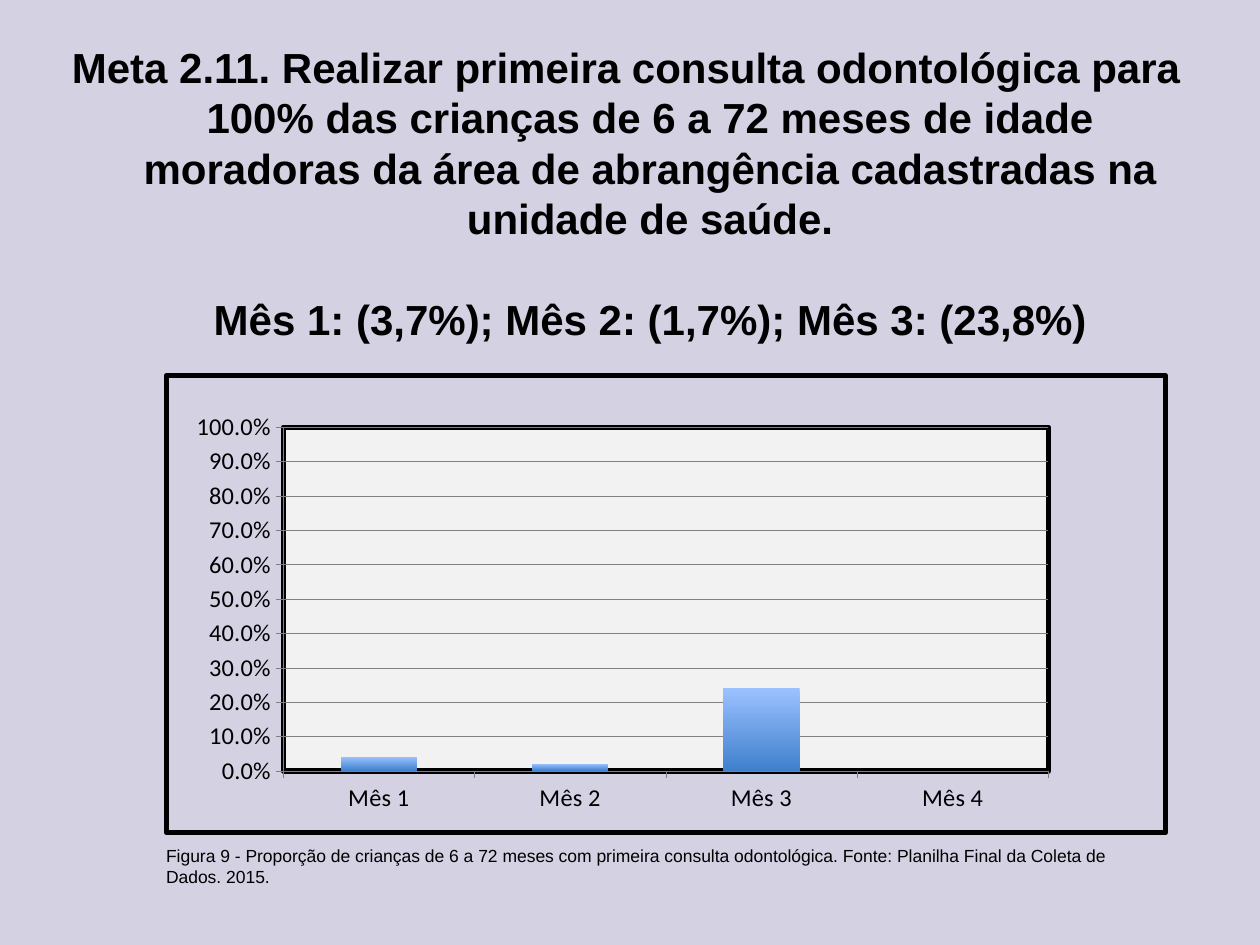
from lxml import etree
from pptx import Presentation
from pptx.chart.data import CategoryChartData
from pptx.dml.color import RGBColor
from pptx.enum.chart import XL_CHART_TYPE as ChartType, XL_TICK_MARK as Tick
from pptx.enum.text import MSO_ANCHOR as Anchor, MSO_AUTO_SIZE as AutoSize, PP_ALIGN as Align
from pptx.oxml import parse_xml
from pptx.oxml.ns import nsdecls, qn
from pptx.util import Inches, Pt

COLORS = {
    "background": "D4D1E3",
    "ink": "000000",
    "plot": "F2F2F2",
    "grid": "808080",
    "bar_top": "9BC1FF",
    "bar_bottom": "3F80CD",
}


def rgb(name):
    return RGBColor.from_string(COLORS[name])


def style_font(font, name, size, bold=False):
    font.name, font.size, font.bold = name, Pt(size), bold
    font.color.rgb = rgb("ink")


def place(shape, box):
    shape.left, shape.top, shape.width, shape.height = map(Inches, box)


def add_heading(slide, box, lines):
    title = slide.shapes.title
    place(title, box)
    frame = title.text_frame
    frame.text = "\n".join(lines)
    frame.word_wrap = True
    frame.auto_size = AutoSize.NONE
    frame.vertical_anchor = Anchor.TOP
    for number, para in enumerate(frame.paragraphs):
        para.alignment = Align.CENTER
        para.line_spacing = 1.0
        para.space_before = Pt(29 if number else 2)
        # The first line of the heading hangs left of the rest
        props = para._p.get_or_add_pPr()
        props.set("marL", str(Inches(0.38)))
        props.set("indent", str(Inches(0 if number else -0.38)))
        for span in para.runs:
            style_font(span.font, "Arial", 24, bold=True)


def framed_area(fill):
    """Chart shape properties with the thick black frame."""
    return parse_xml(
        f'<c:spPr {nsdecls("c", "a")}>{fill}<a:ln w="{Pt(3)}"><a:solidFill>'
        f'<a:srgbClr val="{COLORS["ink"]}"/></a:solidFill></a:ln></c:spPr>')


def set_plot_layout(plot_area, x, y, w, h):
    for old in plot_area.findall(qn("c:layout")):
        plot_area.remove(old)
    layout = etree.Element(qn("c:layout"))
    manual = etree.SubElement(layout, qn("c:manualLayout"))
    settings = [("layoutTarget", "inner"), ("xMode", "edge"), ("yMode", "edge"),
                ("x", x), ("y", y), ("w", w), ("h", h)]
    for tag, value in settings:
        etree.SubElement(manual, qn(f"c:{tag}")).set("val", str(value))
    plot_area.insert(0, layout)


def style_line(line):
    line.color.rgb = rgb("grid")
    line.width = Pt(0.25)


def add_column_chart(slide, box, values):
    data = CategoryChartData(number_format="0.0%")
    data.categories = [f"Mês {month}" for month in range(1, len(values) + 1)]
    data.add_series("Series 1", values)
    chart = slide.shapes.add_chart(
        ChartType.COLUMN_CLUSTERED, *map(Inches, box), data).chart
    chart.has_legend = chart.has_title = False
    style_font(chart.font, "Calibri", 10)

    # Axes
    for axis in (chart.category_axis, chart.value_axis):
        style_font(axis.tick_labels.font, "Calibri", 14)
        style_line(axis.format.line)
        axis.major_tick_mark = Tick.OUTSIDE
        axis.minor_tick_mark = Tick.NONE
    scale = chart.value_axis
    scale.minimum_scale, scale.maximum_scale, scale.major_unit = 0, 1, 0.1
    scale.tick_labels.number_format = "0.0%"
    scale.tick_labels.number_format_is_linked = False
    style_line(scale.major_gridlines.format.line)

    # Bars
    plot = chart.plots[0]
    plot.gap_width = 150
    plot.vary_by_categories = False
    fill = plot.series[0].format.fill
    fill.gradient()
    fill.gradient_angle = 270
    for stop, position, name in zip(fill.gradient_stops, (0, 1), ("bar_top", "bar_bottom")):
        stop.position = position
        stop.color.rgb = rgb(name)

    # Framed plot and chart areas
    space = chart._chartSpace
    plot_area = space.chart.plotArea
    set_plot_layout(plot_area, 0.117, 0.113, 0.766, 0.752)
    plot_area.append(framed_area(
        f'<a:solidFill><a:srgbClr val="{COLORS["plot"]}"/></a:solidFill>'))
    space.chart.addnext(framed_area("<a:noFill/>"))


def add_caption(slide, box, text):
    frame = slide.shapes.add_textbox(*map(Inches, box)).text_frame
    frame.word_wrap = True
    frame.text = text
    style_font(frame.paragraphs[0].runs[0].font, "Arial", 10)


def main():
    deck = Presentation()
    deck.slide_width, deck.slide_height = Inches(10), Inches(7.5)
    slide = deck.slides.add_slide(deck.slide_layouts[5])
    background = slide.background.fill
    background.solid()
    background.fore_color.rgb = rgb("background")

    add_heading(slide, (0.47, 0.28, 9, 2.58), [
        "Meta 2.11. Realizar primeira consulta odontológica para 100% das crianças "
        "de 6 a 72 meses de idade moradoras da área de abrangência cadastradas na "
        "unidade de saúde.",
        "Mês 1: (3,7%); Mês 2: (1,7%); Mês 3: (23,8%)",
    ])
    add_column_chart(slide, (1.3, 2.96, 7.97, 3.67), (0.04, 0.02, 0.24, 0))
    add_caption(slide, (1.22, 6.66, 7.8, 0.74),
                "Figura 9 - Proporção de crianças de 6 a 72 meses com primeira consulta "
                "odontológica. Fonte: Planilha Final da Coleta de Dados. 2015.")
    deck.save("out.pptx")


if __name__ == "__main__":
    main()
